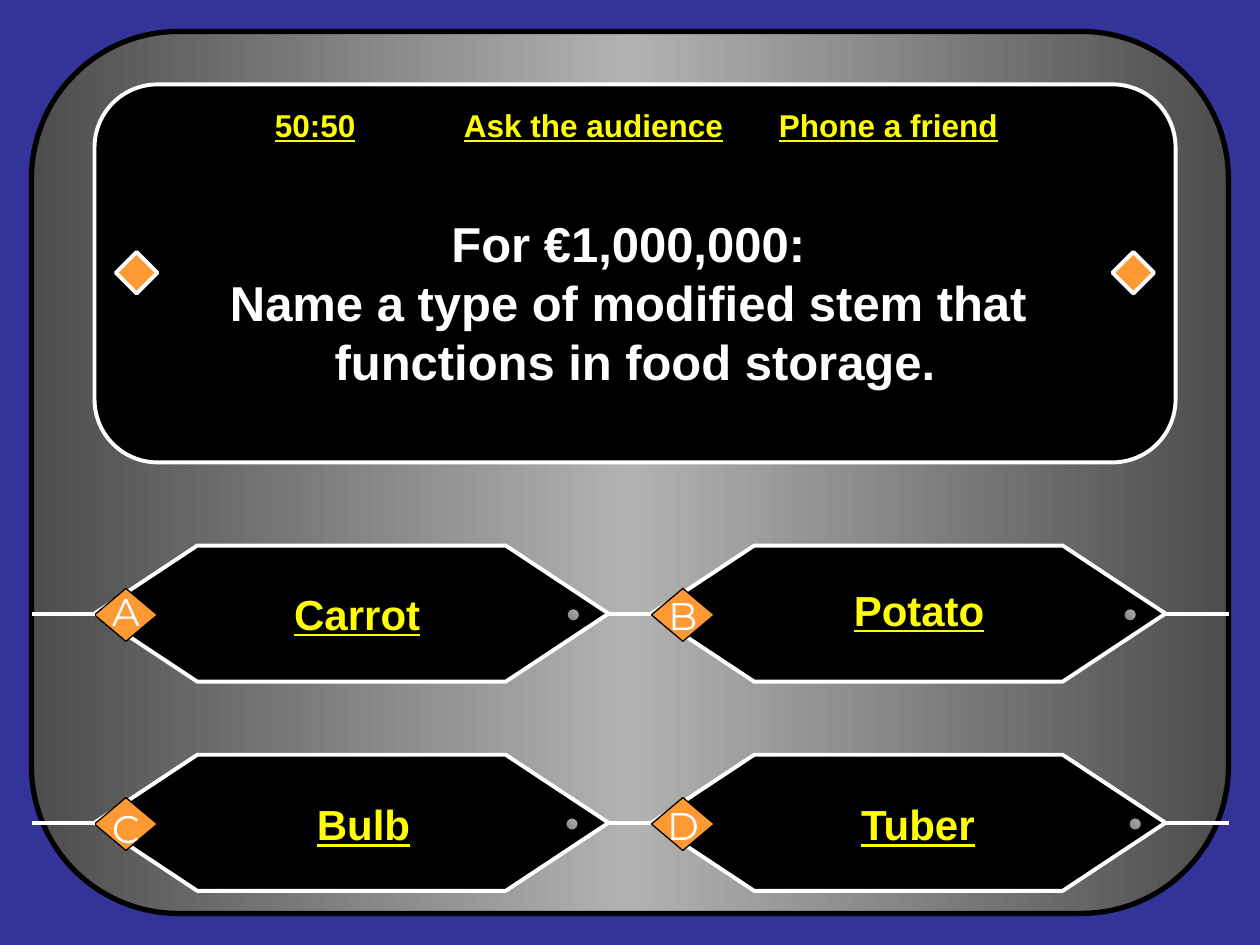
from collections import namedtuple
from dataclasses import dataclass

from pptx import Presentation
from pptx.dml.color import RGBColor
from pptx.enum.shapes import MSO_CONNECTOR, MSO_SHAPE
from pptx.enum.text import MSO_ANCHOR, PP_ALIGN
from pptx.oxml import parse_xml
from pptx.oxml.ns import nsdecls, qn
from pptx.util import Inches, Pt

Box = namedtuple("Box", "left top width height")
Answer = namedtuple("Answer", "letter text rise label dot")


@dataclass(frozen=True)
class Theme:
    back: str = "333399"
    black: str = "000000"
    white: str = "FFFFFF"
    gold: str = "FF9933"
    link: str = "FFFF00"
    steel: tuple = ((0, "4D4D4D"), (50, "B2B2B2"), (100, "4D4D4D"))
    bead: tuple = ((0, "808080"), (100, "B2B2B2"))
    font: str = "Arial"
    light: str = "Montserrat"
    ask: int = 28
    reply: int = 24
    mark: int = 22
    help: int = 18
    thin: float = 0.75
    edge: float = 2.25
    thick: float = 3


THEME = Theme()


def color(code):
    return RGBColor.from_string(code)


def place(box):
    return [Inches(value) for value in box]


def blend(shape, stops, angle):
    shape.fill.gradient()
    shape.fill.gradient_angle = angle
    items = shape._element.spPr.find(qn("a:gradFill")).find(qn("a:gsLst"))
    for item in list(items):
        items.remove(item)
    for spot, code in stops:
        items.append(parse_xml(
            f'<a:gs {nsdecls("a")} pos="{spot * 1000}">'
            f'<a:srgbClr val="{code}"/></a:gs>'))


def add_form(slide, kind, box, fill=None, line=None, width=THEME.edge):
    shape = slide.shapes.add_shape(kind, *place(box))
    shape.shadow.inherit = False
    if fill:
        shape.fill.solid()
        shape.fill.fore_color.rgb = color(fill)
    else:
        shape.fill.background()
    if line:
        shape.line.color.rgb = color(line)
        shape.line.width = Pt(width)
    else:
        shape.line.fill.background()
    return shape


def add_wire(slide, start, end, y, source=None, target=None):
    wire = slide.shapes.add_connector(
        MSO_CONNECTOR.STRAIGHT, Inches(start), Inches(y), Inches(end), Inches(y))
    if source:
        wire.begin_connect(source, 3)
    if target:
        wire.end_connect(target, 1)
    wire.line.color.rgb = color(THEME.white)
    wire.line.width = Pt(THEME.edge)
    wire._element.spPr.append(parse_xml(f'<a:effectLst {nsdecls("a")}/>'))


def add_run(para, text, size, code, font=THEME.font, bold=True, under=False):
    run = para.add_run()
    run.text = text
    run.font.size = Pt(size)
    run.font.name = font
    run.font.bold = bold
    run.font.underline = under
    run.font.color.rgb = color(code)


def set_frame(shape, anchor=MSO_ANCHOR.MIDDLE):
    frame = shape.text_frame
    frame.word_wrap = False
    frame.vertical_anchor = anchor
    para = frame.paragraphs[0]
    para.alignment = PP_ALIGN.CENTER
    return para


def draw_plate(slide, box):
    plate = add_form(slide, MSO_SHAPE.FLOWCHART_ALTERNATE_PROCESS, box,
                     line=THEME.black, width=THEME.thick)
    blend(plate, THEME.steel, 0)


def draw_ask(slide, box, lines):
    panel = add_form(slide, MSO_SHAPE.FLOWCHART_ALTERNATE_PROCESS, box,
                     THEME.black, THEME.white)
    para = set_frame(panel)
    panel.text_frame.margin_top = Inches(0.5)
    for index, text in enumerate(lines):
        if index:
            para = panel.text_frame.add_paragraph()
            para.alignment = PP_ALIGN.CENTER
        add_run(para, text, THEME.ask, THEME.white)
    side = 0.33
    for left in (box.left + 0.17, box.left + box.width - 0.17 - side):
        add_form(slide, MSO_SHAPE.DIAMOND, Box(left, box.top + 1.33, side, side),
                 THEME.gold, THEME.white)


def draw_help(slide, box, parts):
    para = set_frame(slide.shapes.add_textbox(*place(box)))
    for text in parts:
        link = bool(text.strip())
        add_run(para, text, THEME.help, THEME.link if link else THEME.white,
                under=link)


def draw_reply(slide, box, answer):
    hexagon = add_form(slide, MSO_SHAPE.FLOWCHART_PREPARATION, box,
                       THEME.black, THEME.white)
    dot = add_form(slide, MSO_SHAPE.FLOWCHART_CONNECTOR,
                   Box(box.left + answer.dot, box.top + 0.5, 0.1, 0.1),
                   line=THEME.black, width=THEME.thin)
    blend(dot, THEME.bead, 45)
    add_form(slide, MSO_SHAPE.DIAMOND, Box(box.left, box.top + 0.34, 0.5, 0.42),
             THEME.gold, THEME.black, THEME.thin)
    mark = slide.shapes.add_textbox(
        *place(Box(box.left + 0.01, box.top + answer.rise, 0.48, 0.47)))
    add_run(set_frame(mark, MSO_ANCHOR.TOP), answer.letter, THEME.mark,
            THEME.white, THEME.light, bold=False)
    shift, drop = answer.label
    label = add_form(slide, MSO_SHAPE.ACTION_BUTTON_CUSTOM,
                     Box(box.left + shift, box.top + drop, 3.33, 0.98))
    add_run(set_frame(label), answer.text, THEME.reply, THEME.link, under=True)
    return hexagon


def draw_row(slide, box, answers):
    lead, gap = 0.5, 0.34
    width = (box.width - 2 * lead - gap) / 2
    lefts = [box.left + lead + index * (width + gap) for index in range(2)]
    first, second = [
        draw_reply(slide, Box(left, box.top, width, box.height), answer)
        for left, answer in zip(lefts, answers)]
    y, right = box.top + box.height / 2, box.left + box.width
    add_wire(slide, box.left, lefts[0], y, target=first)
    add_wire(slide, lefts[0] + width, lefts[1], y, first, second)
    add_wire(slide, right - lead, right, y, source=second)


def main():
    deck = Presentation()
    deck.slide_width, deck.slide_height = Inches(10), Inches(7.5)
    slide = deck.slides.add_slide(deck.slide_layouts[6])
    slide.background.fill.solid()
    slide.background.fill.fore_color.rgb = color(THEME.back)

    draw_plate(slide, Box(0.25, 0.25, 9.5, 7))
    draw_ask(slide, Box(0.75, 0.67, 8.58, 3), (
        "For €1,000,000: ",
        "Name a type of modified stem that ",
        "functions in food storage."))
    draw_help(slide, Box(0.79, 0.65, 8.52, 0.68), (
        "50:50", "\t\t", "Ask the audience", "\t", "Phone a friend"))
    draw_row(slide, Box(0.25, 4.33, 9.5, 1.08), (
        Answer("A", "Carrot", 0.29, (0.42, 0.05), 3.75),
        Answer("B", "Potato", 0.32, (0.46, 0.02), 3.75)))
    draw_row(slide, Box(0.25, 5.99, 9.5, 1.08), (
        Answer("C", "Bulb", 0.35, (0.47, 0.06), 3.74),
        Answer("D", "Tuber", 0.33, (0.45, 0.06), 3.79)))
    deck.save("out.pptx")


if __name__ == "__main__":
    main()
